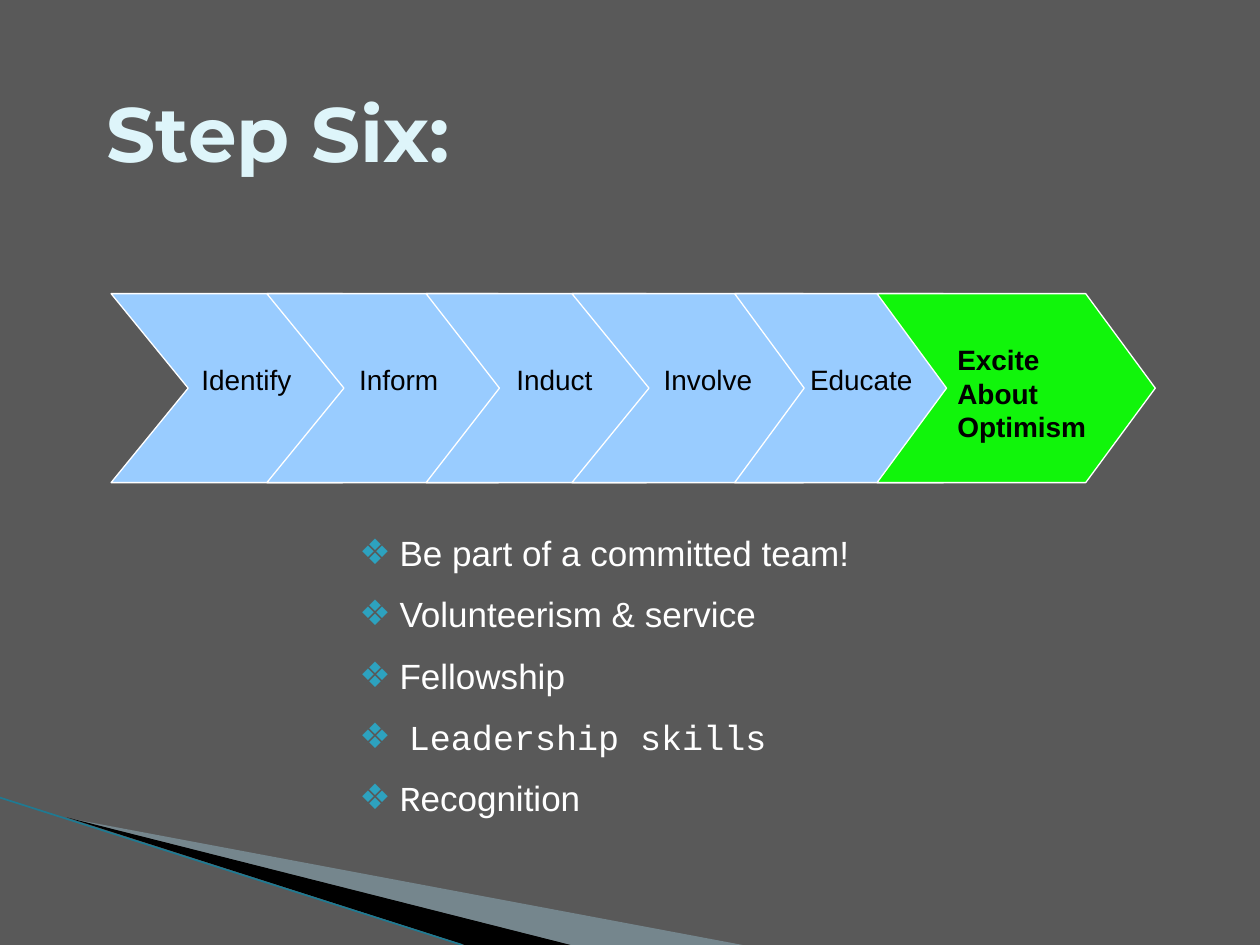
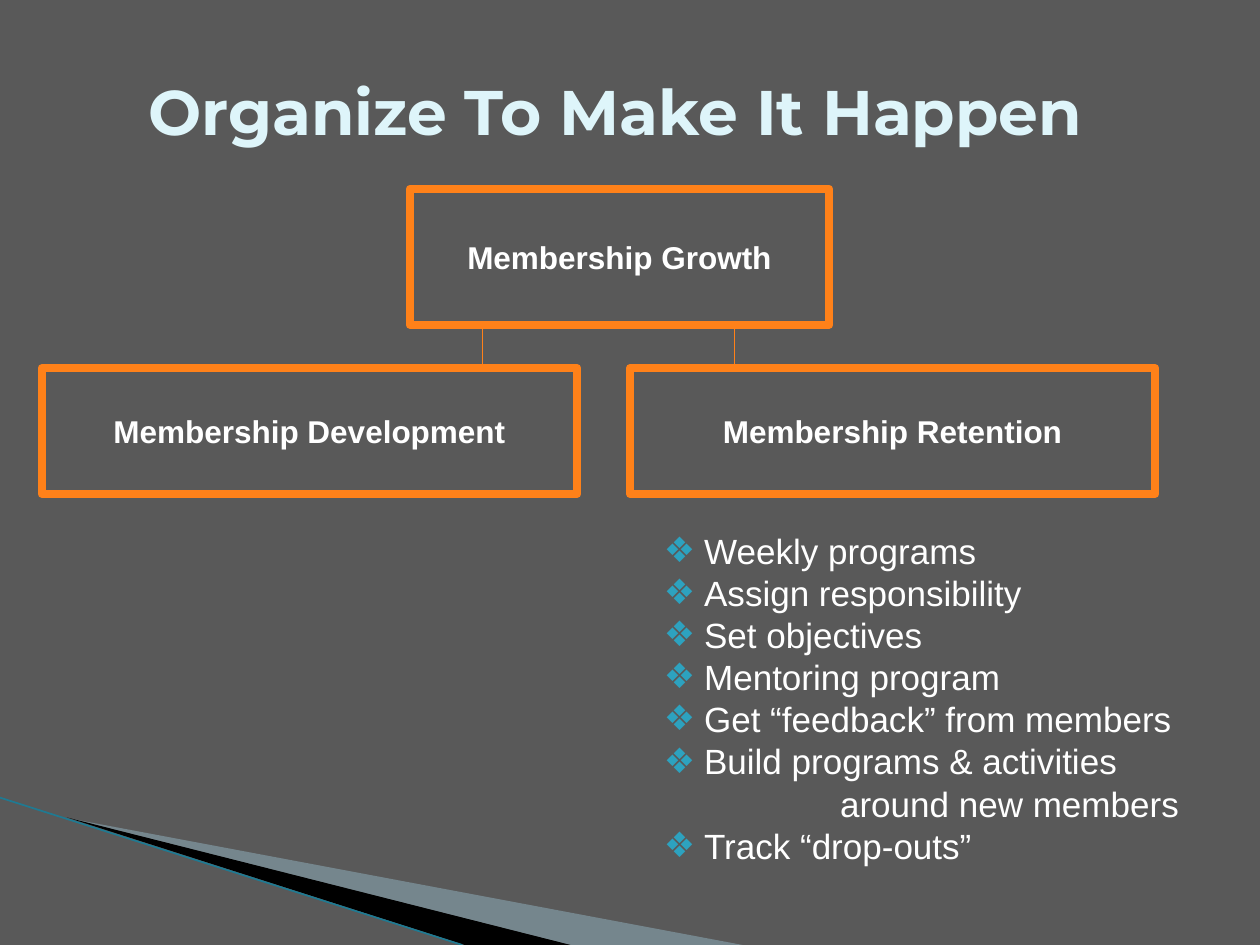
from lxml import etree
from pptx import Presentation
from pptx import util as u
from pptx.dml import color
from pptx.enum import shapes, text
from pptx.oxml import ns

COLORS = {
    "background": "595959", "title": "DEF5FA", "body": "FFFFFF", "bullet": "2DA2BF",
    "label": "000000", "step": "99CCFF", "current": "11F50B", "outline": "FFFFFF",
    "frame": "FF8119", "swoosh": "A0CBDC", "shade": "000000", "edge": "1F7A92",
}
SANS, MONO, HEADING = "Arial", "Courier New", "Montserrat"
HANGING = 0.81

SWOOSHES = [
    ("swoosh", 40, [(1.4, 16.5), (14.97, 19.05), (11.5, 19.05)]),
    ("shade", 100, [(1.35, 16.48), (11.5, 19.05), (9.37, 19.05)]),
]
EDGE = (0, 16.08, 9.32, 19.05)

STEP_TITLE = ("Step Six:", 44, (1.9, 1.07, 22.43, 3.18))
STEP_TOP, STEP_HEIGHT = 5.92, 3.81
LABEL_TOP, LABEL_WIDTH, LABEL_HEIGHT = 7.19, 3.3, 0.94
STEPS = [
    ("Identify", 2.24, 6.22, 3.81),
    ("Inform", 5.38, 6.22, 6.99),
    ("Induct", 8.59, 5.92, 10.16),
    ("Involve", 11.53, 6.22, 13.13),
    ("Educate", 14.81, 5.61, 16.08),
    ("Excite About Optimism", 17.68, 5.61, 19.05),
]
BENEFITS_AREA = (6.99, 10.59, 14.17, 6.25)
BENEFITS = [
    (HANGING, [("Be part of a committed team!", SANS)]),
    (HANGING, [("Volunteerism & service", SANS)]),
    (HANGING, [("Fellowship", SANS)]),
    (1.0, [("Leadership skills", MONO)]),
    (HANGING, [("R", MONO), ("ecognition", SANS)]),
]

ORGANIZE_TITLE = ("Organize To Make It Happen", 36, (2.74, 0.64, 21.59, 3.18))
TEAMS = [
    ("Membership Growth", (8.26, 3.81, 8.46, 2.74)),
    ("Membership Development", (0.84, 7.42, 10.8, 2.54)),
    ("Membership Retention", (12.7, 7.42, 10.59, 2.54)),
]
BRANCHES = [9.73, 14.81]
BRANCH_TOP, BRANCH_BOTTOM = 6.55, 7.42
TASKS_AREA = (13.13, 10.16, 11.6, 7.82)
CONTINUED = "around new members"
TASKS = [
    "Weekly programs", "Assign responsibility", "Set objectives", "Mentoring program",
    "Get “feedback” from members", "Build programs & activities", CONTINUED,
    "Track “drop-outs”",
]


def rgb(name):
    return color.RGBColor.from_string(COLORS[name])


def lengths(values):
    return [u.Cm(value) for value in values]


def place(shape, area):
    shape.left, shape.top, shape.width, shape.height = lengths(area)


def style(font, name, size, tint, bold=False):
    font.name, font.size, font.bold = name, u.Pt(size), bold
    font.color.rgb = rgb(tint)


def add_line(page, ends, tint, width):
    line = page.shapes.add_connector(shapes.MSO_CONNECTOR.STRAIGHT, *lengths(ends))
    line.line.color.rgb = rgb(tint)
    line.line.width = u.Pt(width)
    etree.SubElement(line.element.spPr, ns.qn("a:effectLst"))
    return line


def add_block(page, kind, area, fill, outline, width):
    block = page.shapes.add_shape(kind, *lengths(area))
    block.shadow.inherit = False
    if fill:
        block.fill.solid()
        block.fill.fore_color.rgb = rgb(fill)
    else:
        block.fill.background()
    block.line.color.rgb = rgb(outline)
    block.line.width = u.Pt(width)
    return block


def decorate_master(deck, page):
    master = deck.slide_master
    master.background.fill.solid()
    master.background.fill.fore_color.rgb = rgb("background")
    parts = []
    for tint, opacity, points in SWOOSHES:
        start, *rest = [lengths(point) for point in points]
        builder = page.shapes.build_freeform(*start)
        builder.add_line_segments(rest)
        swoosh = builder.convert_to_shape()
        swoosh.shadow.inherit = False
        swoosh.fill.solid()
        swoosh.fill.fore_color.rgb = rgb(tint)
        swoosh.line.fill.background()
        if opacity < 100:
            fill = swoosh.element.spPr.find(".//" + ns.qn("a:srgbClr"))
            etree.SubElement(fill, ns.qn("a:alpha"), val=str(opacity * 1000))
        parts.append(swoosh)
    parts.append(add_line(page, EDGE, "edge", 0.95))
    for number, part in enumerate(parts):
        part.element.xpath(".//p:cNvPr")[0].set("id", str(20 + number))
        master.shapes.element.insert(2 + number, part.element)


def set_title(page, wording, size, area):
    title = page.shapes.title
    place(title, area)
    frame = title.text_frame
    frame.text = wording
    frame.auto_size = text.MSO_AUTO_SIZE.NONE
    frame.vertical_anchor = text.MSO_ANCHOR.MIDDLE
    para = frame.paragraphs[0]
    para.alignment = text.PP_ALIGN.LEFT
    style(para.runs[0].font, HEADING, size, "title", True)


def set_bullet(para, indent, marked):
    props = para._p.get_or_add_pPr()
    props.set("marL", str(u.Cm(indent)))
    props.set("indent", str(-u.Cm(indent) if marked else 0))
    if marked:
        tint = etree.SubElement(props, ns.qn("a:buClr"))
        etree.SubElement(tint, ns.qn("a:srgbClr"), val=COLORS["bullet"])
        etree.SubElement(props, ns.qn("a:buFont"), typeface=SANS)
        etree.SubElement(props, ns.qn("a:buChar"), char="❖")
    else:
        etree.SubElement(props, ns.qn("a:buNone"))


def fill_list(page, area, items, gap, anchor):
    body = page.placeholders[1]
    place(body, area)
    frame = body.text_frame
    frame.auto_size = text.MSO_AUTO_SIZE.NONE
    frame.vertical_anchor = anchor
    for number, (indent, marked, spans) in enumerate(items):
        para = frame.add_paragraph() if number else frame.paragraphs[0]
        set_bullet(para, indent, marked)
        para.space_before = u.Pt(gap if number else 0)
        for wording, font in spans:
            span = para.add_run()
            span.text = wording
            style(span.font, font, 20, "body")


def build_steps(page):
    set_title(page, *STEP_TITLE)
    last = len(STEPS) - 1
    for number, (name, left, width, label_left) in enumerate(STEPS):
        chevron = add_block(page, shapes.MSO_SHAPE.CHEVRON,
                            (left, STEP_TOP, width, STEP_HEIGHT),
                            "current" if number == last else "step", "outline", 0.75)
        chevron.adjustments[0] = width / 4 / STEP_HEIGHT
    for number, (name, left, width, label_left) in enumerate(STEPS):
        current = number == last
        top, height = (6.78, 2.31) if current else (LABEL_TOP, LABEL_HEIGHT)
        label = page.shapes.add_textbox(*lengths((label_left, top, LABEL_WIDTH, height)))
        label.text_frame.word_wrap = True
        label.text_frame.text = name
        style(label.text_frame.paragraphs[0].runs[0].font, SANS, 16, "label", current)
    items = [(indent, True, spans) for indent, spans in BENEFITS]
    fill_list(page, BENEFITS_AREA, items, 11, text.MSO_ANCHOR.TOP)


def build_organization(page):
    set_title(page, *ORGANIZE_TITLE)
    for name, area in TEAMS:
        box = add_block(page, shapes.MSO_SHAPE.RECTANGLE, area, None, "frame", 4.5)
        frame = box.text_frame
        frame.text = name
        frame.word_wrap = False
        frame.vertical_anchor = text.MSO_ANCHOR.MIDDLE
        para = frame.paragraphs[0]
        para.alignment = text.PP_ALIGN.CENTER
        style(para.runs[0].font, SANS, 18, "body", True)
    for x in BRANCHES:
        add_line(page, (x, BRANCH_TOP, x, BRANCH_BOTTOM), "frame", 0.75)
    items = [(3.55 if task == CONTINUED else HANGING, task != CONTINUED, [(task, SANS)])
             for task in TASKS]
    fill_list(page, TASKS_AREA, items, 0, text.MSO_ANCHOR.MIDDLE)


def main():
    deck = Presentation()
    deck.slide_width, deck.slide_height = u.Cm(25.4), u.Cm(19.05)
    layout = deck.slide_layouts[1]
    steps, organization = [deck.slides.add_slide(layout) for _ in range(2)]
    decorate_master(deck, steps)
    build_steps(steps)
    build_organization(organization)
    deck.save("out.pptx")


if __name__ == "__main__":
    main()
